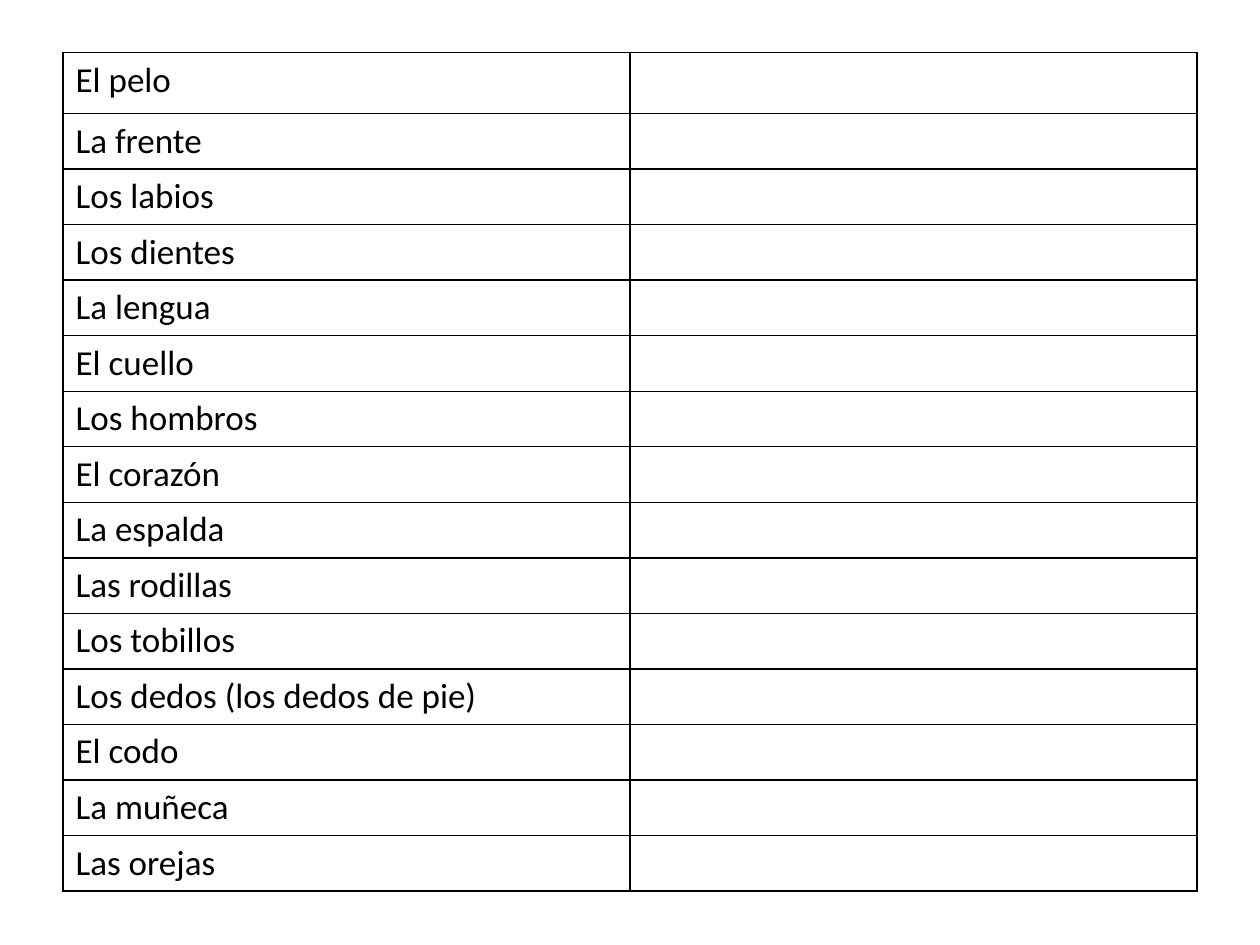
from dataclasses import dataclass

from lxml import etree
from pptx import Presentation
from pptx.dml import color
from pptx.oxml import ns
from pptx.util import Pt

BLACK = color.RGBColor(0, 0, 0)
FONT = "Calibri"
FONT_SIZE = Pt(20)
BORDER_WIDTH = Pt(1)
BORDER_SIDES = ("a:lnL", "a:lnR", "a:lnT", "a:lnB")
COLUMN_WIDTH = Pt(324)
TABLE_HEIGHT = Pt(472.3)
FIRST_ROW, NORMAL_ROW, LOW_ROW = 35, 29.5, 26.6


@dataclass(frozen=True)
class BodyPart:
    name: str
    row_height: float = NORMAL_ROW


BODY_PARTS = (
    BodyPart("El pelo", FIRST_ROW),
    BodyPart("La frente"),
    BodyPart("Los labios"),
    BodyPart("Los dientes", LOW_ROW),
    BodyPart("La lengua"),
    BodyPart("El cuello"),
    BodyPart("Los hombros"),
    BodyPart("El corazón"),
    BodyPart("La espalda"),
    BodyPart("Las rodillas"),
    BodyPart("Los tobillos"),
    BodyPart("Los dedos (los dedos de pie)", LOW_ROW),
    BodyPart("El codo"),
    BodyPart("La muñeca"),
    BodyPart("Las orejas"),
)


def add_borders(cell) -> None:
    """Draw a thin black line on every side of the cell."""
    properties = cell._tc.get_or_add_tcPr()
    for position, side in enumerate(BORDER_SIDES):
        line = etree.Element(ns.qn(side), w=str(BORDER_WIDTH))
        fill = etree.SubElement(line, ns.qn("a:solidFill"))
        etree.SubElement(fill, ns.qn("a:srgbClr"), val=str(BLACK))
        properties.insert(position, line)


def write_name(cell, name: str) -> None:
    run = cell.text_frame.paragraphs[0].add_run()
    run.text = name
    run.font.name = FONT
    run.font.size = FONT_SIZE
    run.font.color.rgb = BLACK


def add_vocabulary_table(slide, parts: tuple[BodyPart, ...]) -> None:
    frame = slide.shapes.add_table(
        len(parts), 2, Pt(36), Pt(30), 2 * COLUMN_WIDTH, TABLE_HEIGHT
    )
    table = frame.table
    table.first_row = False
    table.horz_banding = False

    # Names on the left, empty answer cells on the right
    for row, part in zip(table.rows, parts):
        row.height = Pt(part.row_height)
        for cell in row.cells:
            cell.fill.background()
            add_borders(cell)
        write_name(row.cells[0], part.name)
    frame.height = TABLE_HEIGHT


def main() -> None:
    presentation = Presentation()
    presentation.slide_width = Pt(720)
    presentation.slide_height = Pt(540)

    # Blank layout: the slide has no title
    slide = presentation.slides.add_slide(presentation.slide_layouts[6])
    add_vocabulary_table(slide, BODY_PARTS)
    presentation.save("out.pptx")


if __name__ == "__main__":
    main()
